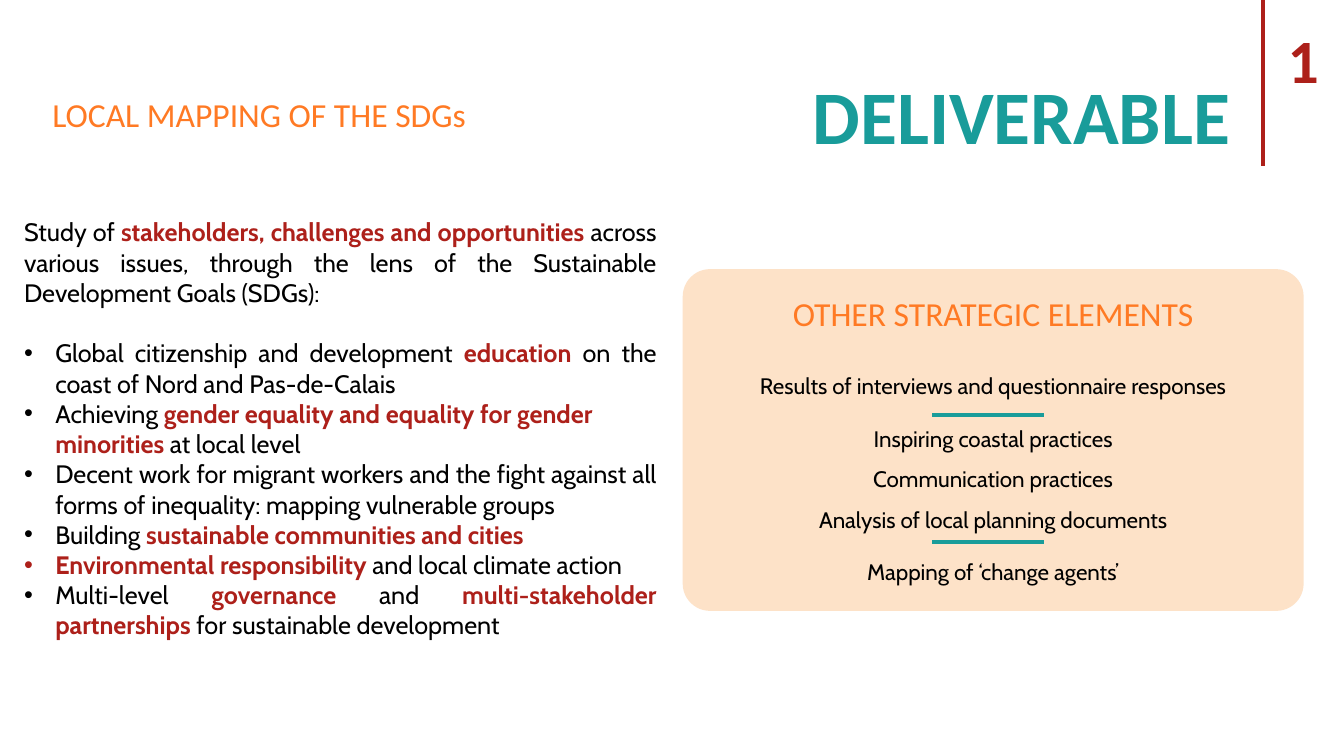
from lxml import etree
from pptx import Presentation
from pptx.dml.color import RGBColor
from pptx.enum.shapes import MSO_CONNECTOR, MSO_SHAPE
from pptx.enum.text import PP_ALIGN
from pptx.oxml.ns import qn
from pptx.util import Inches, Pt

LEFT, RIGHT, MID, JUST = PP_ALIGN.LEFT, PP_ALIGN.RIGHT, PP_ALIGN.CENTER, PP_ALIGN.JUSTIFY
ROUND, LINE = MSO_SHAPE.ROUNDED_RECTANGLE, MSO_CONNECTOR.STRAIGHT
WIDE, HIGH = Inches(13.33), Inches(7.5)
HUES = {"red": "AD201A", "teal": "199C9A", "orange": "FF7A24",
        "peach": "FDE2C8", "black": "000000"}
HEAD = {"name": "Calibri", "size": Pt(24), "hue": "orange"}
BODY = {"name": "Cabin", "size": Pt(18), "hue": "black"}
STRONG = {"bold": True, "hue": "red"}

INTRO = ("Study of *stakeholders, challenges and opportunities *across various issues, "
         "through the lens of the Sustainable Development Goals (SDGs):")
# Text between stars is emphasised
TOPICS = [
    ("Global citizenship and development *education *on the coast of Nord and Pas-de-Calais", JUST),
    ("Achieving *gender equality and equality for gender minorities *at local level", LEFT),
    ("Decent work for migrant workers and the fight against all forms of inequality: "
     "mapping vulnerable groups", JUST),
    ("Building *sustainable communities and cities*", JUST),
    ("*Environmental responsibility *and local climate action", JUST),
    ("Multi-level *governance *and *multi-stakeholder partnerships *for sustainable development",
     JUST),
]
# Each group is set apart from the one before
ITEMS = [
    ["Results of interviews and questionnaire responses"],
    ["Inspiring coastal practices", "Communication practices",
     "Analysis of local planning documents"],
    ["Mapping of ‘change agents’"],
]


def color(hue):
    return RGBColor.from_string(HUES[hue])


def part(box, x, y, w, h):
    """Box placed inside another one, in percent of its size."""
    left, top, wide, high = box
    return (int(left + wide * x / 100), int(top + high * y / 100),
            int(wide * w / 100), int(high * h / 100))


def frame(shapes, box, side=0.1):
    text = shapes.add_textbox(*box).text_frame
    text.word_wrap = True
    text.margin_left = text.margin_right = Inches(side)
    return text


def write(para, words, font, **form):
    for key, value in form.items():
        setattr(para, key, value)
    for num, piece in enumerate(words.split("*")):
        if not piece:
            continue
        run = para.add_run()
        run.text = piece
        style = {**font, **STRONG} if num % 2 else font
        for key, value in style.items():
            if key == "hue":
                run.font.color.rgb = color(value)
            else:
                setattr(run.font, key, value)


def bullet(para):
    props = para._p.get_or_add_pPr()
    props.set("marL", str(Inches(0.31)))
    props.set("indent", str(Inches(-0.31)))
    etree.SubElement(props, qn("a:buFont")).set("typeface", "Arial")
    etree.SubElement(props, qn("a:buChar")).set("char", "•")


def rule(shapes, box, hue, width):
    left, top, wide, high = box
    line = shapes.add_connector(LINE, left, top, left + wide, top + high)
    line.line.color.rgb = color(hue)
    line.line.width = Pt(width)
    etree.SubElement(line._element.spPr, qn("a:effectLst"))


def header(shapes, box):
    # Number and its rule
    number = frame(shapes, part(box, 95.8, 15, 4.2, 46), 0)
    write(number.paragraphs[0], "1", {**HEAD, **STRONG, "size": Pt(44)}, line_spacing=0.9)
    rule(shapes, part(box, 94, 0, 0, 100), "red", 3)
    # Title and topic
    title = frame(shapes, part(box, 12.7, 38.2, 79.6, 61))
    write(title.paragraphs[0], "DELIVERABLE",
          {**HEAD, "size": Pt(54), "bold": True, "hue": "teal"}, alignment=RIGHT)
    topic = frame(shapes, part(box, 3.15, 53.3, 44.3, 30))
    write(topic.paragraphs[0], "LOCAL MAPPING OF THE SDGs", HEAD)


def study(shapes, box):
    text = frame(shapes, box)
    write(text.paragraphs[0], INTRO, BODY, alignment=JUST)
    for num, (words, align) in enumerate(TOPICS):
        para = text.add_paragraph()
        para.space_before = Pt(0 if num else 21.6)
        bullet(para)
        write(para, words, BODY, alignment=align)


def card(shapes, box):
    parts = shapes.add_group_shape().shapes
    # Panel
    panel = parts.add_shape(ROUND, *box)
    panel.adjustments[0] = 0.08
    panel.shadow.inherit = False
    panel.fill.solid()
    panel.fill.fore_color.rgb = color("peach")
    panel.line.fill.background()
    # Heading
    head = frame(parts, part(box, 3.57, 5.6, 92.86, 11.8))
    write(head.paragraphs[0], "OTHER STRATEGIC ELEMENTS", HEAD, alignment=MID)
    # List
    text = frame(parts, part(box, 3.57, 24.8, 92.86, 65.2))
    para = text.paragraphs[0]
    for block, group in enumerate(ITEMS):
        for row, words in enumerate(group):
            if block or row:
                para = text.add_paragraph()
                para.space_before = Pt(0 if row else 9)
            write(para, words, {**BODY, "size": Pt(16)}, alignment=MID, line_spacing=1.5)
    # Dividers
    for y in (42.8, 79.9):
        rule(parts, part(box, 40.2, y, 17.9, 0), "teal", 2.75)


def main():
    deck = Presentation()
    deck.slide_width, deck.slide_height = WIDE, HIGH
    shapes = deck.slides.add_slide(deck.slide_layouts[6]).shapes
    page = (0, 0, WIDE, HIGH)
    header(shapes, part(page, 0, 0, 100, 22))
    study(shapes, part(page, 1.05, 28, 48.54, 66))
    card(shapes, part(page, 50.8, 35.6, 46.2, 45.2))
    deck.save("out.pptx")


if __name__ == "__main__":
    main()
